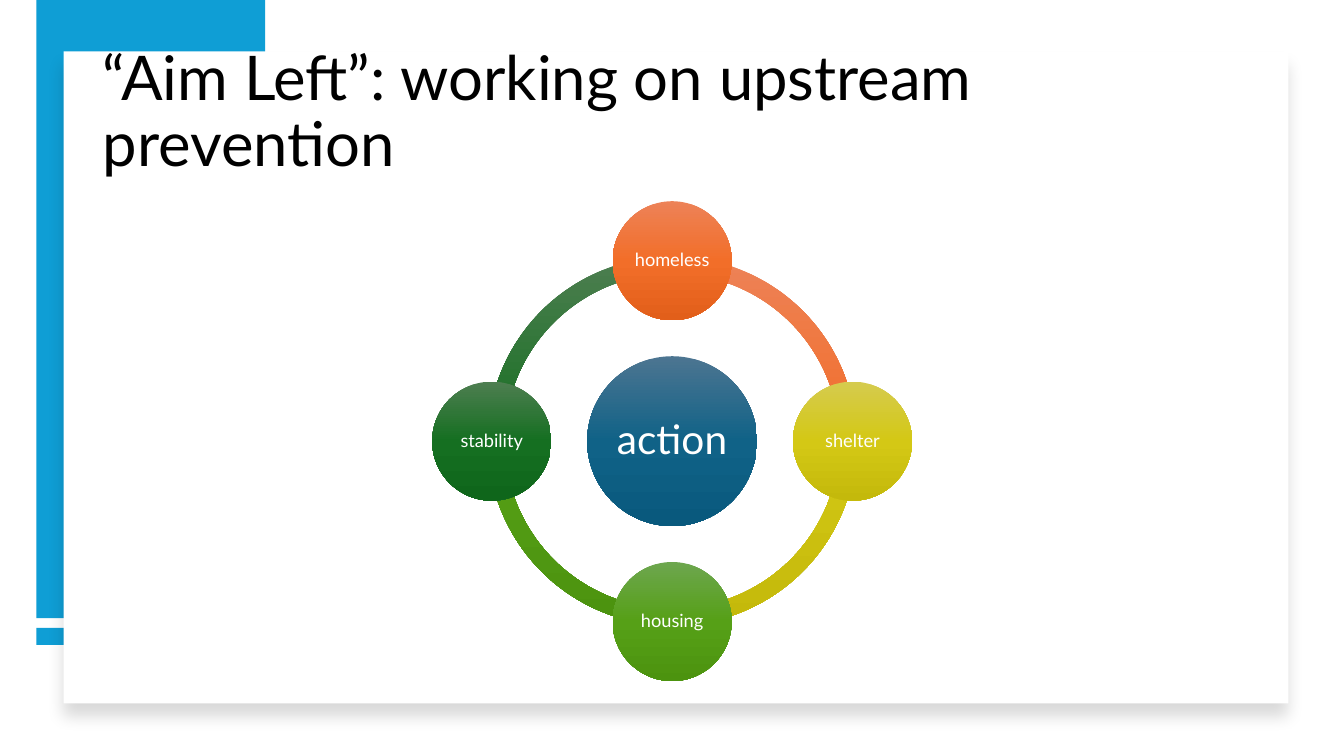
from copy import deepcopy
from math import cos, radians, sin

from lxml import etree
from pptx import Presentation
from pptx.dml.color import RGBColor
from pptx.enum.shapes import MSO_SHAPE
from pptx.enum.text import MSO_ANCHOR, PP_ALIGN
from pptx.oxml.ns import qn
from pptx.util import Pt

RECT, OVAL, ARC = MSO_SHAPE.RECTANGLE, MSO_SHAPE.OVAL, MSO_SHAPE.BLOCK_ARC
MIDDLE = MSO_ANCHOR.MIDDLE
LEFT, CENTER = PP_ALIGN.LEFT, PP_ALIGN.CENTER

FONT = "Lato"
BLACK = RGBColor(0x00, 0x00, 0x00)
WHITE = RGBColor(0xFF, 0xFF, 0xFF)
BLUE = RGBColor(0x0F, 0x9E, 0xD5)
TEAL = (RGBColor(0x4C, 0x75, 0x91), RGBColor(0x10, 0x62, 0x87), RGBColor(0x09, 0x59, 0x7D))
ORANGE = (RGBColor(0xED, 0x82, 0x57), RGBColor(0xF2, 0x6E, 0x29), RGBColor(0xE2, 0x5F, 0x1A))
YELLOW = (RGBColor(0xD5, 0xCB, 0x4E), RGBColor(0xD4, 0xC8, 0x15), RGBColor(0xC4, 0xB9, 0x0B))
LIME = (RGBColor(0x6D, 0xA6, 0x4E), RGBColor(0x56, 0xA0, 0x17), RGBColor(0x4C, 0x93, 0x0F))
GREEN = (RGBColor(0x4D, 0x7E, 0x50), RGBColor(0x15, 0x6F, 0x21), RGBColor(0x0F, 0x66, 0x1B))

STAGES = [("homeless", ORANGE), ("shelter", YELLOW), ("housing", LIME), ("stability", GREEN)]


def add_shape(slide, kind, x, y, w, h):
    s = slide.shapes.add_shape(kind, Pt(x), Pt(y), Pt(w), Pt(h))
    s.shadow.inherit = False
    s.line.fill.background()
    return s


def add_rect(slide, x, y, w, h, color):
    s = add_shape(slide, RECT, x, y, w, h)
    s.fill.solid()
    s.fill.fore_color.rgb = color
    return s


def add_round(slide, kind, cx, cy, size, colors):
    s = add_shape(slide, kind, cx - size / 2, cy - size / 2, size, size)
    s.fill.gradient()
    s.fill.gradient_angle = 270
    stops = s._element.spPr.find(".//" + qn("a:gsLst"))
    stops.append(deepcopy(stops[0]))
    for i, (stop, color) in enumerate(zip(s.fill.gradient_stops, colors)):
        stop.position = i / 2
        stop.color.rgb = color
    return s


def add_shadow(s, color, alpha, blur, dist):
    effects = s._element.spPr.find(qn("a:effectLst"))
    shadow = etree.SubElement(effects, qn("a:outerShdw"), blurRad=str(Pt(blur)),
                              dist=str(Pt(dist)), dir="5400000", algn="t", rotWithShape="0")
    clr = etree.SubElement(shadow, qn("a:srgbClr"), val=str(color))
    etree.SubElement(clr, qn("a:alpha"), val=str(alpha * 1000))


def write(s, text, size, color, align, inset_x, inset_y):
    tf = s.text_frame
    frame = {"word_wrap": True, "vertical_anchor": MIDDLE,
             "margin_left": Pt(inset_x), "margin_right": Pt(inset_x),
             "margin_top": Pt(inset_y), "margin_bottom": Pt(inset_y)}
    for name, value in frame.items():
        setattr(tf, name, value)
    p = tf.paragraphs[0]
    p.alignment = align
    p.line_spacing = 0.9
    r = p.add_run()
    r.text = text
    for name, value in {"name": FONT, "size": Pt(size)}.items():
        setattr(r.font, name, value)
    r.font.color.rgb = color


def draw_backdrop(slide, x, y, w, h):
    bar_w = 163.5
    add_rect(slide, x, y + 448.5, bar_w, 12.25, BLUE)
    add_rect(slide, x, y, bar_w, 441.5, BLUE)
    card = add_rect(slide, x + 19.5, y + 36.75, w - 19.5, h - 36.75, WHITE)
    add_shadow(card, BLACK, 15, 11, 10)


def draw_title(slide, x, y, w, h):
    s = slide.shapes.add_textbox(Pt(x), Pt(y), Pt(w), Pt(h))
    write(s, "“Aim Left”: working on upstream prevention", 44, BLACK, LEFT, 7.2, 3.6)


def draw_cycle(slide, x, y, size):
    cx, cy = x + size / 2, y + size / 2
    node = size / 4.03
    orbit = (size - node) / 2
    quarter = 54
    for i, (_, colors) in reversed(list(enumerate(STAGES))):
        arc = add_round(slide, ARC, cx, cy, size * 0.769, colors)
        start = (i + 3) % 4 * quarter
        arc.adjustments[0] = start
        arc.adjustments[1] = (start + quarter) % (4 * quarter)
        arc.adjustments[2] = 0.046
    hub = add_round(slide, OVAL, cx, cy, size * 0.354, TEAL)
    write(hub, "action", 29, WHITE, CENTER, 2.9, 2.9)
    for i, (label, colors) in enumerate(STAGES):
        angle = radians(90 * i - 90)
        s = add_round(slide, OVAL, cx + orbit * cos(angle), cy + orbit * sin(angle), node, colors)
        write(s, label, 13, WHITE, CENTER, 1.4, 1.4)


def main():
    prs = Presentation()
    prs.slide_width, prs.slide_height = Pt(960), Pt(540)
    slide = prs.slides.add_slide(prs.slide_layouts[6])
    draw_backdrop(slide, 26, 0, 894.25, 502.5)
    draw_title(slide, 66.25, 28.75, 828, 104.5)
    draw_cycle(slide, 308.75, 143.75, 342.75)
    prs.save("out.pptx")


if __name__ == "__main__":
    main()
